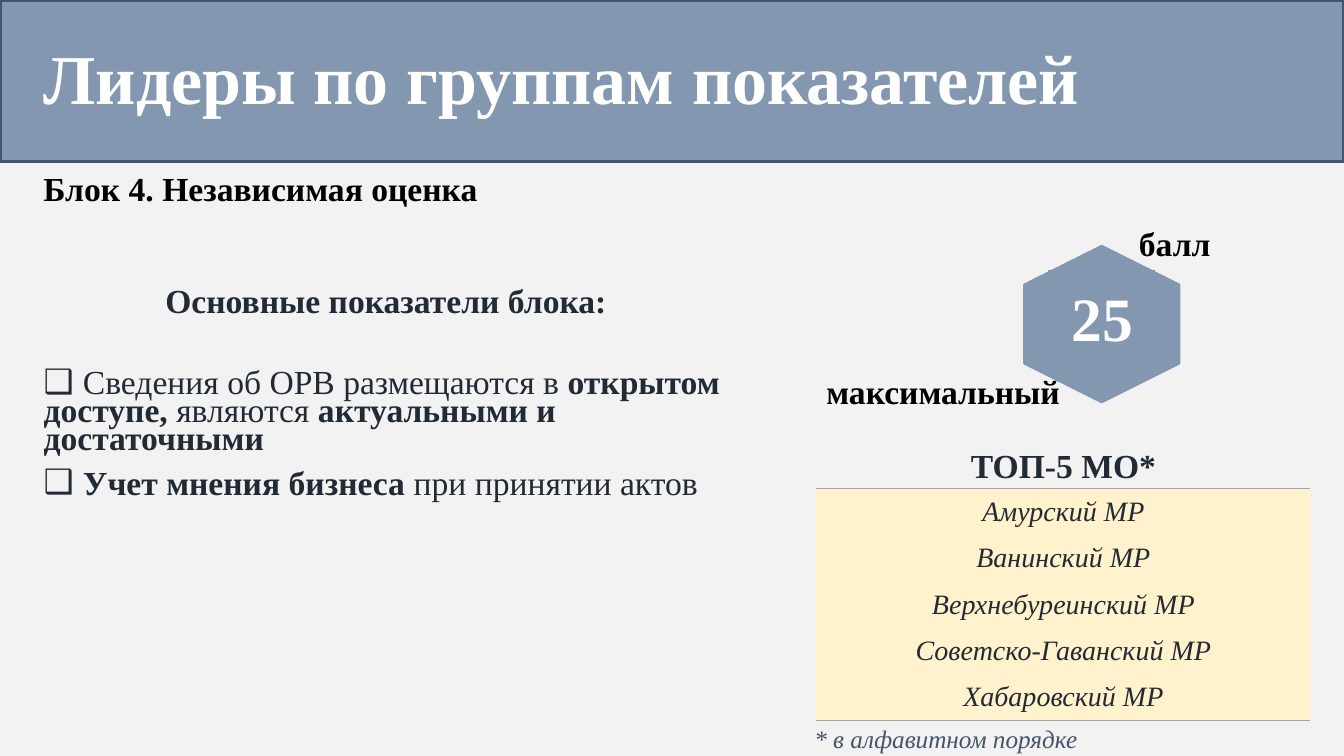
from pptx import Presentation
from pptx.dml.color import RGBColor
from pptx.enum.shapes import MSO_SHAPE
from pptx.enum.text import MSO_ANCHOR, MSO_AUTO_SIZE, PP_ALIGN
from pptx.oxml import parse_xml
from pptx.oxml.ns import nsdecls
from pptx.util import Pt

FONT = "Times New Roman"
BLUE, SLATE, DARK, GREY = "8497B0", "44546A", "222A35", "A5A5A5"
BLACK, WHITE, CREAM, PAPER = "000000", "FFFFFF", "FFF2CC", "F2F2F2"
LEADERS = ["Амурский МР", "Ванинский МР", "Верхнебуреинский МР",
           "Советско-Гаванский МР", "Хабаровский МР"]


def rgb(value):
    """Turn a hex string into a colour."""
    return RGBColor.from_string(value)


def place(item, left, top, width, height):
    """Move and size a shape, in points."""
    item.left, item.top = Pt(left), Pt(top)
    item.width, item.height = Pt(width), Pt(height)


def set_bullet(para, mark):
    """Give a paragraph a hanging bullet, or none when mark is empty."""
    properties = para._p.get_or_add_pPr()
    indent = Pt(28) if mark else 0
    properties.set("marL", str(indent))
    properties.set("indent", str(-indent))
    tag = f'a:buChar {nsdecls("a")} char="{mark}"' if mark else f'a:buNone {nsdecls("a")}'
    properties.append(parse_xml(f"<{tag}/>"))


def write(para, spans, size, color, bold=False, italic=False, align=PP_ALIGN.LEFT,
          line=None, before=0, after=0, bullet=""):
    """Fill a paragraph with (text, bold) spans or one plain string."""
    para.alignment = align
    para.space_before, para.space_after = Pt(before), Pt(after)
    if line:
        para.line_spacing = Pt(line)
    set_bullet(para, bullet)
    font = para.font
    font.name, font.size, font.italic = FONT, Pt(size), italic
    font.color.rgb = rgb(color)
    if isinstance(spans, str):
        font.bold = bold
        para.add_run().text = spans
        return
    for text, strong in spans:
        span = para.add_run()
        span.text = text
        span.font.bold = strong


def prepare(box):
    """Make a text frame wrap from its top and keep its size."""
    frame = box.text_frame
    frame.word_wrap = True
    frame.auto_size = MSO_AUTO_SIZE.NONE
    frame.vertical_anchor = MSO_ANCHOR.TOP
    return frame


def add_label(page, area, text, size, color, **style):
    """Add a text box with one paragraph."""
    box = page.shapes.add_textbox(*map(Pt, area))
    write(prepare(box).paragraphs[0], text, size, color, **style)


def add_figure(page, kind, area, fill, line, weight):
    """Add a preset shape with an optional fill and a line."""
    figure = page.shapes.add_shape(kind, *map(Pt, area))
    figure.shadow.inherit = False
    if fill:
        figure.fill.solid()
        figure.fill.fore_color.rgb = rgb(fill)
    else:
        figure.fill.background()
    figure.line.color.rgb = rgb(line)
    figure.line.width = Pt(weight)
    return figure


def add_border(cell, side):
    """Draw a thin grey line on one side of a cell."""
    cell._tc.get_or_add_tcPr().insert(0, parse_xml(
        f'<a:{side} {nsdecls("a")} w="{Pt(1)}"><a:solidFill>'
        f'<a:srgbClr val="{GREY}"/></a:solidFill></a:{side}>'))


def add_leaders(page):
    """Add the one-column table of leading districts."""
    height = 33.12
    table = page.shapes.add_table(len(LEADERS), 1, Pt(583.2), Pt(349.2), Pt(352.8),
                                  Pt(height * len(LEADERS))).table
    table.first_row = table.horz_banding = False
    table._tbl.tblPr[0].text = "{2D5ABB26-0587-4C30-8999-92F81FD0307C}"
    for index, name in enumerate(LEADERS):
        table.rows[index].height = Pt(height)
        cell = table.cell(index, 0)
        cell.margin_left = cell.margin_right = cell.margin_top = cell.margin_bottom = 0
        cell.vertical_anchor = MSO_ANCHOR.MIDDLE
        cell.fill.solid()
        cell.fill.fore_color.rgb = rgb(CREAM)
        write(cell.text_frame.paragraphs[0], name, 20, DARK, italic=True,
              align=PP_ALIGN.CENTER)
    add_border(table.cell(0, 0), "lnT")
    add_border(table.cell(len(LEADERS) - 1, 0), "lnB")


def fill_title(page):
    """Write the title on its banner."""
    title = page.shapes.title
    banner = add_figure(page, MSO_SHAPE.RECTANGLE, (0, 0, 960, 115.2), BLUE, SLATE, 2.25)
    title._element.addprevious(banner._element)
    place(title, 24, 53.3, 936, 40.3)
    write(prepare(title).paragraphs[0], "Лидеры по группам показателей", 50, WHITE,
          bold=True, line=28)


def fill_body(page):
    """Write the list of indicators."""
    body = page.placeholders[1]
    place(body, 24, 205.2, 503.3, 158.4)
    frame = prepare(body)
    write(frame.paragraphs[0], "Основные показатели блока:", 24, DARK, bold=True,
          align=PP_ALIGN.CENTER, line=20, before=6, after=38)
    items = [
        ([("Сведения об ОРВ размещаются в ", False), ("открытом", True)],
         {"bullet": "❑"}),
        ([("доступе, ", True), ("являются ", False),
          ("актуальными и достаточными", True)], {"after": 6}),
        ([("Учет мнения бизнеса ", True), ("при принятии актов", False)],
         {"bullet": "❑", "before": 6}),
    ]
    for spans, style in items:
        write(frame.add_paragraph(), spans, 24, DARK, line=20, **style)


def add_score(page):
    """Add the hexagon with the maximum score and its labels."""
    hexagon = add_figure(page, MSO_SHAPE.HEXAGON, (731.5, 176.4, 110.9, 110.2),
                         BLUE, BLUE, 2.25)
    hexagon.rotation = 90
    hexagon.adjustments[0] = 0.25
    add_figure(page, MSO_SHAPE.RECTANGLE, (748.8, 193, 75.6, 76.3), None, BLUE, 0.75)
    add_label(page, (754.6, 196.6, 66.2, 60.5), "25", 44, WHITE, bold=True,
              align=PP_ALIGN.CENTER)
    for text, area in (("максимальный", (583.2, 272.2, 182.9, 26.6)),
                       ("балл", (806.4, 166.3, 70.6, 26.6))):
        add_label(page, area, text, 24, BLACK, bold=True, line=18)


def main():
    """Build the slide and save it."""
    deck = Presentation()
    deck.slide_width, deck.slide_height = Pt(960), Pt(540)
    page = deck.slides.add_slide(deck.slide_layouts[1])
    page.background.fill.solid()
    page.background.fill.fore_color.rgb = rgb(PAPER)
    fill_title(page)
    fill_body(page)
    add_label(page, (24, 127.4, 560, 26.6), "Блок 4. Независимая оценка", 24, BLACK,
              bold=True, line=18)
    add_label(page, (583.2, 323.3, 352.8, 28), "ТОП-5 МО*", 24, DARK, bold=True,
              align=PP_ALIGN.CENTER, line=20)
    add_leaders(page)
    add_score(page)
    add_label(page, (574.6, 513.4, 370.8, 28.8), "* в алфавитном порядке", 18, SLATE,
              italic=True)
    deck.save("out.pptx")


if __name__ == "__main__":
    main()
